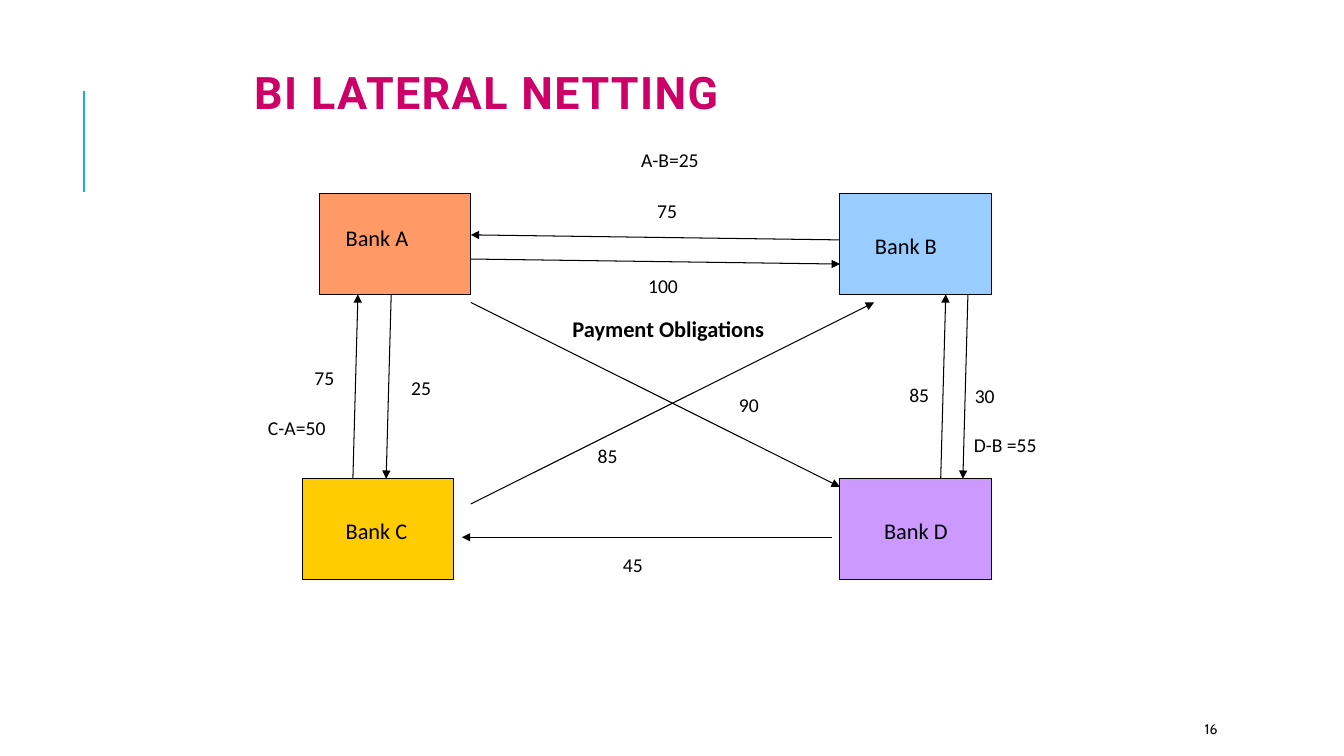
"""Build a slide on bilateral netting between four banks."""
from lxml import etree
from pptx import Presentation
from pptx.dml.color import RGBColor
from pptx.enum import shapes, text
from pptx.oxml import ns
from pptx.util import Inches, Pt

BLACK = RGBColor(0x00, 0x00, 0x00)
DARK = RGBColor(0x0D, 0x0D, 0x0D)
MAGENTA = RGBColor(0xCC, 0x00, 0x66)
ACCENT = RGBColor(0x1C, 0xAD, 0xE4)
ORANGE = RGBColor(0xFF, 0x99, 0x66)
BLUE = RGBColor(0x99, 0xCC, 0xFF)
GOLD = RGBColor(0xFF, 0xCC, 0x00)
PURPLE = RGBColor(0xCC, 0x99, 0xFF)

deck = Presentation()
deck.slide_width, deck.slide_height = Inches(13.33), Inches(7.5)
page = deck.slides.add_slide(deck.slide_layouts[5])


def add_label(words, left, top, width, height, size, bold=False):
    box = page.shapes.add_textbox(Inches(left), Inches(top), Inches(width), Inches(height))
    frame = box.text_frame
    frame.word_wrap = False
    frame.auto_size = text.MSO_AUTO_SIZE.SHAPE_TO_FIT_TEXT
    para = frame.paragraphs[0]
    para.text = words
    para.font.name, para.font.size, para.font.bold = "Calibri", Pt(size), bold
    para.font.color.rgb = BLACK
    return box


def add_line(x1, y1, x2, y2, color, weight):
    line = page.shapes.add_connector(
        shapes.MSO_CONNECTOR.STRAIGHT, Inches(x1), Inches(y1), Inches(x2), Inches(y2))
    line.line.color.rgb = color
    line.line.width = Pt(weight)
    etree.SubElement(line._element.spPr, ns.qn("a:effectLst"))
    return line


add_line(0.83, 1.9, 0.83, 0.9, ACCENT, 1.5)

title = page.shapes.title
title.left, title.top = Inches(2.42), Inches(0.67)
title.width, title.height = Inches(8.5), Inches(0.58)
title.text_frame.text = "BI LATERAL NETTING"
title.text_frame.auto_size = text.MSO_AUTO_SIZE.NONE
title.text_frame.vertical_anchor = text.MSO_ANCHOR.MIDDLE
heading = title.text_frame.paragraphs[0]
heading.alignment = text.PP_ALIGN.LEFT
heading.line_spacing = 0.8
heading.font.name, heading.font.size, heading.font.bold = "Roboto", Pt(32), True
heading.font.color.rgb = MAGENTA
heading.runs[0].font._element.set("spc", "100")

number = add_label("16", 11.85, 7.08, 1.06, 0.3, 10)
number.text_frame.word_wrap = True
number.text_frame.auto_size = text.MSO_AUTO_SIZE.NONE
number.text_frame.vertical_anchor = text.MSO_ANCHOR.MIDDLE
number.text_frame.paragraphs[0].font.name = "Cabin"
number.text_frame.paragraphs[0].font.color.rgb = DARK

banks = [
    ("Bank A", ORANGE, 3.17, 1.92, 3.33, 2.17),
    ("Bank B", BLUE, 8.33, 1.92, 8.58, 2.25),
    ("Bank C", GOLD, 3, 4.75, 3.33, 5.08),
    ("Bank D", PURPLE, 8.33, 4.75, 8.67, 5.08),
]
for name, color, left, top, name_left, name_top in banks:
    bank = page.shapes.add_shape(
        shapes.MSO_SHAPE.RECTANGLE, Inches(left), Inches(top), Inches(1.5), Inches(1))
    bank.shadow.inherit = False
    bank.fill.solid()
    bank.fill.fore_color.rgb = color
    bank.line.color.rgb = BLACK
    bank.line.width = Pt(0.75)
    add_label(name, name_left, name_top, 0.83, 0.37, 16)

add_label("Payment Obligations", 5.58, 3.08, 2.2, 0.37, 16, bold=True)

payments = [
    (8.33, 2.38, 4.67, 2.33),
    (4.67, 2.57, 8.33, 2.62),
    (3.5, 4.75, 3.55, 2.92),
    (3.88, 2.92, 3.83, 4.75),
    (9.33, 4.75, 9.38, 2.92),
    (9.6, 2.92, 9.55, 4.75),
    (4.67, 3, 8.33, 4.83),
    (4.67, 5, 8.67, 3),
    (8.25, 5.33, 4.58, 5.33),
]
for ends in payments:
    arrow = add_line(*ends, BLACK, 0.75)
    etree.SubElement(arrow.line._get_or_add_ln(), ns.qn("a:tailEnd"), type="triangle")

amounts = [
    ("75", 6.42, 1.92, 0.4),
    ("100", 6.33, 2.67, 0.5),
    ("75", 3.02, 3.58, 0.4),
    ("25", 3.98, 3.68, 0.4),
    ("85", 8.92, 3.75, 0.4),
    ("30", 9.57, 3.76, 0.4),
    ("90", 7.23, 3.85, 0.4),
    ("85", 5.83, 4.36, 0.4),
    ("45", 6.08, 5.44, 0.4),
    ("A-B=25", 6.26, 1.42, 0.78),
    ("C-A=50", 2.56, 4.08, 0.77),
    ("D-B =55", 9.56, 4.25, 0.83),
]
for words, left, top, width in amounts:
    add_label(words, left, top, width, 0.34, 14)

deck.save("out.pptx")
